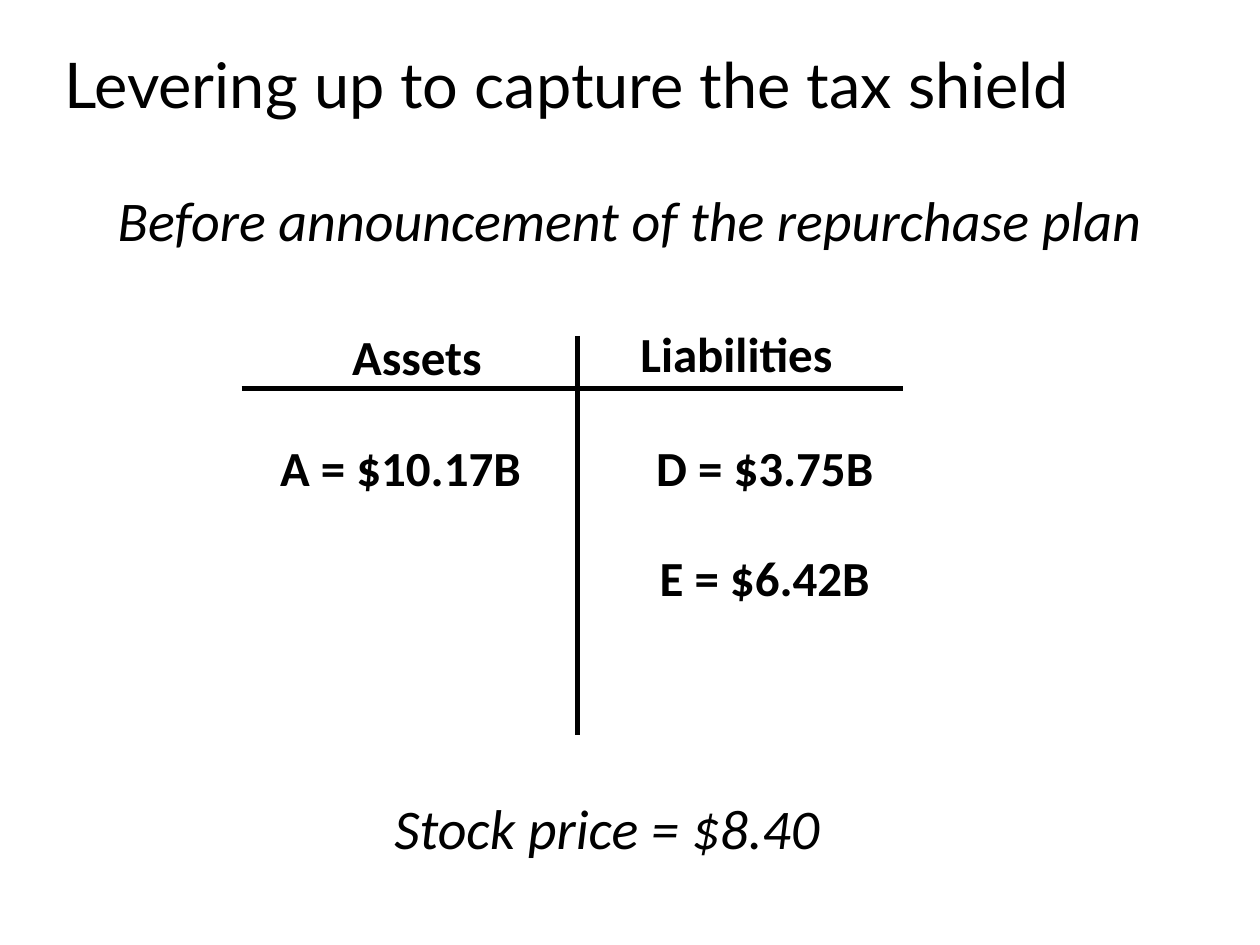
from dataclasses import dataclass

import pptx
import pptx.dml.color
import pptx.enum.shapes
import pptx.enum.text
import pptx.oxml.ns
import pptx.util
from lxml import etree

Cm = pptx.util.Cm
Anchor = pptx.enum.text.MSO_ANCHOR

TITLE = {"name": "Lato", "size": pptx.util.Pt(36)}
CAPTION = {"name": "Calibri", "size": pptx.util.Pt(32), "italic": True}
ENTRY = {"name": "Calibri", "size": pptx.util.Pt(28), "bold": True}
BLACK = "000000"

WIDE = 22.86
ENTRY_WIDTH = 5.59
ENTRY_HEIGHT = 1.45
ASSETS_LEFT = 5.28
LIABILITIES_LEFT = 12.62
FIRST_ROW = 8.69
ROW_STEP = 2.23


@dataclass
class Label:
    text: str
    left: float
    top: float
    width: float
    height: float
    style: dict
    anchor: Anchor = Anchor.TOP


@dataclass
class Rule:
    left: float
    top: float
    right: float
    bottom: float


def entry(text: str, left: float, row: int) -> Label:
    top = FIRST_ROW + row * ROW_STEP
    return Label(text, left, top, ENTRY_WIDTH, ENTRY_HEIGHT, ENTRY)


LABELS = [
    Label("Levering up to capture the tax shield", 0, 0.1, WIDE, 3.18, TITLE, Anchor.MIDDLE),
    Label("Before announcement of the repurchase plan", 1.27, 3.61, WIDE, 2.54, CAPTION),
    Label("Assets", 6.4, 6.45, 4.01, ENTRY_HEIGHT, ENTRY),
    Label("Liabilities", LIABILITIES_LEFT, 6.4, 4.45, ENTRY_HEIGHT, ENTRY),
    entry("D = $3.75B", LIABILITIES_LEFT, 0),
    entry("E = $6.42B", LIABILITIES_LEFT, 1),
    entry("A = $10.17B", ASSETS_LEFT, 0),
    Label("Stock price = $8.40", 0.81, 15.88, WIDE, 2.54, CAPTION),
]

RULES = [
    Rule(4.87, 7.83, 18.2, 7.83),
    Rule(11.64, 6.77, 11.64, 14.82),
]


def set_color(color_format, value: str) -> None:
    color_format.rgb = pptx.dml.color.RGBColor.from_string(value)


def draw_rule(page, rule: Rule) -> None:
    connector = page.shapes.add_connector(
        pptx.enum.shapes.MSO_CONNECTOR.STRAIGHT,
        Cm(rule.left), Cm(rule.top), Cm(rule.right), Cm(rule.bottom),
    )
    connector.line.width = pptx.util.Pt(3)
    set_color(connector.line.color, BLACK)
    properties = connector._element.spPr
    etree.SubElement(properties, pptx.oxml.ns.qn("a:effectLst"))


def draw_label(page, label: Label) -> None:
    box = page.shapes.add_textbox(
        Cm(label.left), Cm(label.top), Cm(label.width), Cm(label.height)
    )
    frame = box.text_frame
    frame.word_wrap = True
    frame.vertical_anchor = label.anchor
    para = frame.paragraphs[0]
    para.alignment = pptx.enum.text.PP_ALIGN.CENTER
    span = para.add_run()
    span.text = label.text
    for attribute, value in label.style.items():
        setattr(span.font, attribute, value)
    set_color(span.font.color, BLACK)


def main() -> None:
    deck = pptx.Presentation()
    deck.slide_width = Cm(25.4)
    deck.slide_height = Cm(19.05)
    page = deck.slides.add_slide(deck.slide_layouts[6])
    for rule in RULES:
        draw_rule(page, rule)
    for label in LABELS:
        draw_label(page, label)
    deck.save("out.pptx")


if __name__ == "__main__":
    main()
